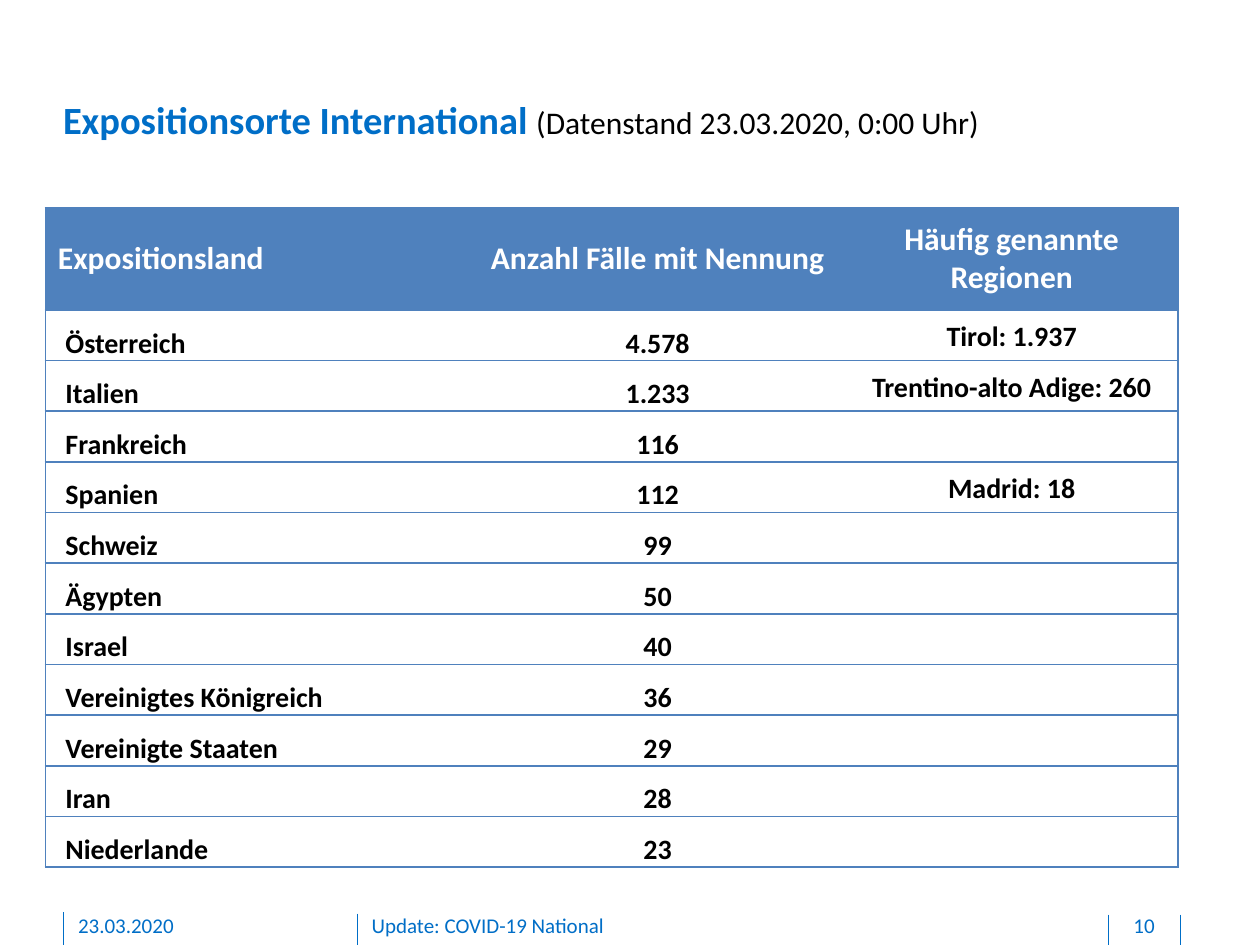
from lxml import etree
from pptx import Presentation
from pptx.dml.color import RGBColor
from pptx.enum.shapes import MSO_CONNECTOR
from pptx.enum.text import MSO_ANCHOR, MSO_AUTO_SIZE, PP_ALIGN
from pptx.oxml.ns import qn
from pptx.util import Inches, Pt

LEFT, CENTER = PP_ALIGN.LEFT, PP_ALIGN.CENTER
TOP, MIDDLE, BOTTOM = MSO_ANCHOR.TOP, MSO_ANCHOR.MIDDLE, MSO_ANCHOR.BOTTOM
STRAIGHT = MSO_CONNECTOR.STRAIGHT
GROW = MSO_AUTO_SIZE.SHAPE_TO_FIT_TEXT
TITLE_ONLY = 5
BLUE, TABLE_BLUE, WHITE, BLACK = "006EC7", "4F81BD", "FFFFFF", "000000"

HEADINGS = ["Expositionsland", "Anzahl Fälle mit Nennung", "Häufig genannte Regionen"]
COUNTRIES = [
    ("Österreich", "4.578", "Tirol: 1.937"),
    ("Italien", "1.233", "Trentino-alto Adige: 260"),
    ("Frankreich", "116", ""),
    ("Spanien", "112", "Madrid: 18"),
    ("Schweiz", "99", ""),
    ("Ägypten", "50", ""),
    ("Israel", "40", ""),
    ("Vereinigtes Königreich", "36", ""),
    ("Vereinigte Staaten", "29", ""),
    ("Iran", "28", ""),
    ("Niederlande", "23", ""),
]


def color(value):
    return RGBColor.from_string(value)


class SlideBuilder:
    font = "Calibri"
    columns, rows = 100, 75

    def __init__(self, deck):
        self.deck = deck
        self.page = deck.slides.add_slide(deck.slide_layouts[TITLE_ONLY])

    def x(self, columns):
        return round(self.deck.slide_width * columns / self.columns)

    def y(self, rows):
        return round(self.deck.slide_height * rows / self.rows)

    def area(self, left, top, width, height):
        return self.x(left), self.y(top), self.x(width), self.y(height)

    def span(self, para, text, size, fill, bold=False):
        span = para.add_run()
        span.text = text
        span.font.name = self.font
        span.font.size = Pt(size)
        span.font.bold = bold
        span.font.color.rgb = color(fill)

    def frame(self, box, bottom=0):
        frame = box.text_frame
        frame.word_wrap = True
        frame.vertical_anchor = TOP
        frame.margin_left = frame.margin_right = frame.margin_top = 0
        frame.margin_bottom = self.y(bottom)
        return frame

    def title(self, area, spans):
        box = self.page.shapes.title
        box.left, box.top, box.width, box.height = self.area(*area)
        frame = self.frame(box)
        frame.auto_size = GROW
        para = frame.paragraphs[0]
        para.alignment = LEFT
        for text, size, fill, bold in spans:
            self.span(para, text, size, fill, bold)

    def text(self, area, text, align=LEFT):
        box = self.page.shapes.add_textbox(*self.area(*area))
        para = self.frame(box, bottom=0.5).paragraphs[0]
        para.alignment = align
        self.span(para, text, 12, BLUE)

    def rule(self, left, top):
        line = self.page.shapes.add_connector(
            STRAIGHT, self.x(left), self.y(top), self.x(left), self.y(self.rows))
        line.line.color.rgb = color(BLUE)
        line.line.width = Pt(0.5)
        etree.SubElement(line._element.spPr, qn("a:effectLst"))

    def borders(self, cell, visible):
        properties = cell._tc.get_or_add_tcPr()
        for side in "LRTB":
            line = etree.SubElement(properties, qn(f"a:ln{side}"), w=str(Pt(1)))
            if side in visible:
                fill = etree.SubElement(line, qn("a:solidFill"))
                etree.SubElement(fill, qn("a:srgbClr"), val=TABLE_BLUE)
            else:
                etree.SubElement(line, qn("a:noFill"))

    def cell(self, cell, text, size, ink, fill, anchor, align):
        cell.fill.solid()
        cell.fill.fore_color.rgb = color(fill)
        cell.vertical_anchor = anchor
        para = cell.text_frame.paragraphs[0]
        para.alignment = align
        if text:
            self.span(para, text, size, ink, True)

    def table(self, left, top, widths, head_height, row_height, headings, records):
        height = head_height + row_height * len(records)
        table = self.page.shapes.add_table(
            len(records) + 1, len(widths),
            *self.area(left, top, sum(widths), height)).table
        table.first_row = table.horz_banding = False
        for column, width in zip(table.columns, widths):
            column.width = self.x(width)
        last = len(widths) - 1
        for r, record in enumerate([headings, *records]):
            table.rows[r].height = self.y(row_height if r else head_height)
            for c, text in enumerate(record):
                cell = table.cell(r, c)
                self.borders(cell, "TB" + "L" * (c == 0) + "R" * (c == last))
                align = CENTER if c else LEFT
                if r == 0:
                    self.cell(cell, text, 18, WHITE, TABLE_BLUE, MIDDLE, align)
                    continue
                self.cell(cell, text, 16, BLACK, WHITE, BOTTOM, align)
                if c < last or not text:
                    cell.margin_left = cell.margin_right = 0
                    cell.margin_top = cell.margin_bottom = 0
                if c == 0:
                    para = cell.text_frame.paragraphs[0]
                    para._p.get_or_add_pPr().set("marL", str(self.x(1.6)))


def main():
    deck = Presentation()
    deck.slide_width, deck.slide_height = Inches(10), Inches(7.5)
    slide = SlideBuilder(deck)
    for left, top in [(28.4, 72.5), (5, 72.4), (93.7, 72.6), (88, 72.6)]:
        slide.rule(left, top)
    slide.title((5, 7.6, 88.5, 3.7), [
        ("Expositionsorte International ", 22, BLUE, True),
        ("(Datenstand 23.03.2020, 0:00 Uhr)", 18, BLACK, False),
    ])
    for left, width, text, align in [
        (6.2, 20.3, "23.03.2020", LEFT),
        (29.5, 56.7, "Update: COVID-19 National", LEFT),
        (88.1, 5.4, "10", CENTER),
    ]:
        slide.text((left, 72.4, width, 2.1), text, align)
    slide.table(3.6, 16.5, [33.7, 29.8, 26.4], 8.1, 4.02, HEADINGS, COUNTRIES)
    deck.save("out.pptx")


if __name__ == "__main__":
    main()
